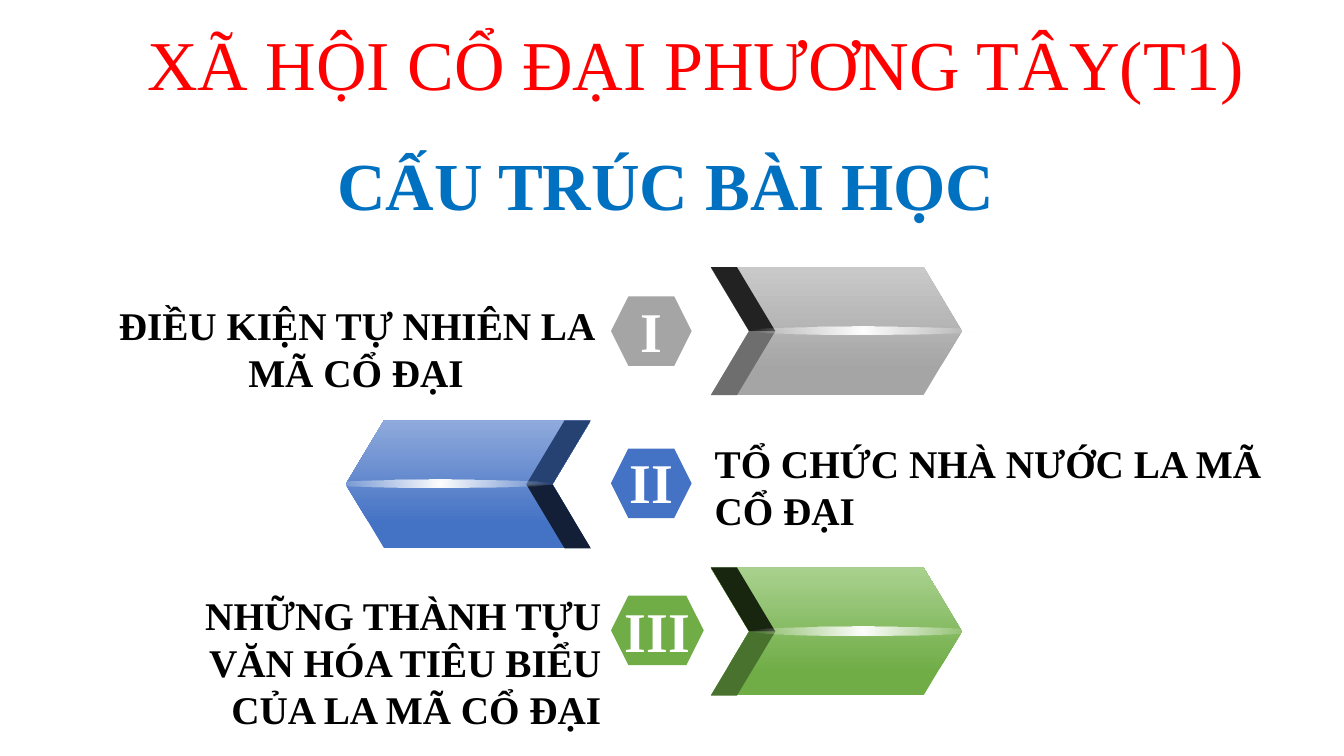
from dataclasses import dataclass
from lxml.etree import SubElement
from pptx import Presentation
from pptx.dml.color import RGBColor
from pptx.enum.shapes import MSO_SHAPE
from pptx.enum.text import MSO_ANCHOR, MSO_AUTO_SIZE, PP_ALIGN
from pptx.oxml.ns import qn
from pptx.util import Inches, Pt


@dataclass
class Theme:
    font: str = "Times New Roman"
    red: str = "FF0000"
    blue: str = "0070C0"
    white: str = "FFFFFF"
    black: str = "000000"
    title: int = 50
    head: int = 48
    number: int = 40
    body: int = 28


theme = Theme()


def write(shape, text, size, color, align, bold=True, wrap=True):
    frame = shape.text_frame
    frame.text = text
    frame.word_wrap = wrap
    frame.auto_size = MSO_AUTO_SIZE.NONE
    line = frame.paragraphs[0]
    line.alignment = align
    font = line.runs[0].font
    font.name, font.size, font.bold = theme.font, Pt(size), bold
    font.color.rgb = RGBColor.from_string(color)


def draw(shape, color=None, stops=(), round_fill=False):
    """Paint a plain colour, or a gradient of (place, colour, alpha) stops."""
    shape.shadow.inherit = False
    shape.line.fill.background()
    if color:
        shape.fill.solid()
        shape.fill.fore_color.rgb = RGBColor.from_string(color)
        return
    shape.fill.gradient()
    grad = shape._element.spPr.find(qn("a:gradFill"))
    for child in list(grad):
        grad.remove(child)
    items = SubElement(grad, qn("a:gsLst"))
    for place, tint, alpha in stops:
        stop = SubElement(items, qn("a:gs"), pos=str(place * 1000))
        tone = SubElement(stop, qn("a:srgbClr"), val=tint)
        SubElement(tone, qn("a:alpha"), val=str(alpha * 1000))
    if round_fill:
        way = SubElement(grad, qn("a:path"), {"path": "circle"})
        SubElement(way, qn("a:fillToRect"), l="50000", t="50000", r="50000", b="50000")
    else:
        SubElement(grad, qn("a:lin"), ang="16200000", scaled="0")


deck = Presentation()
deck.slide_width, deck.slide_height = Inches(13.33), Inches(7.5)
slide = deck.slides.add_slide(deck.slide_layouts[5])
shapes = slide.shapes

# Title
title = shapes.title
title.left, title.top = Inches(1.31), Inches(0.15)
title.width, title.height = Inches(11.19), Inches(0.94)
write(title, "XÃ HỘI CỔ ĐẠI PHƯƠNG TÂY(T1)", theme.title, theme.red,
      PP_ALIGN.CENTER, bold=False, wrap=False)

# Heading
head = shapes.add_shape(MSO_SHAPE.FOLDED_CORNER, Inches(3.21), Inches(1.37),
                        Inches(6.79), Inches(1.08))
head.shadow.inherit = False
head.fill.background()
head.line.fill.background()
write(head, "CẤU TRÚC BÀI HỌC", theme.head, theme.blue, PP_ALIGN.CENTER, wrap=False)
head.text_frame.vertical_anchor = MSO_ANCHOR.TOP

# Arrows: top, points left, base, light, upper fold, lower fold
arrows = [
    (2.65, False, "A5A5A5", "C9C9C9", "222222", "6E6E6E"),
    (4.17, True, "4472C4", "8FAADC", "264273", "121F36"),
    (5.63, False, "70AD47", "A9D18E", "18250F", "4A722F"),
]
tall = 1.27
for top, flip, base, light, upper, lower in arrows:
    # Body
    left, wide = (3.43, 2.43) if flip else (7.05, 2.49)
    arrow = shapes.add_shape(MSO_SHAPE.CHEVRON, Inches(left), Inches(top),
                             Inches(wide), Inches(tall))
    arrow.adjustments[0] = 0.3
    draw(arrow, stops=[(19, base, 100), (100, light, 100)])
    if flip:
        arrow._element.spPr.find(qn("a:xfrm")).set("flipH", "1")

    # Folds at the notched end
    tail, side = (left + wide, -1) if flip else (left, 1)
    mid = top + tall / 2
    for edge, shade in ((top, upper), (top + tall, lower)):
        spots = [(0, edge), (0.26, edge), (0.64, mid), (0.38, mid)]
        points = [(Inches(tail + side * x), Inches(y)) for x, y in spots]
        path = shapes.build_freeform(*points[0])
        path.add_line_segments(points[1:], close=True)
        draw(path.convert_to_shape(), shade)

    # Shine along the crease
    shine = shapes.add_shape(MSO_SHAPE.OVAL, Inches(3.26 if flip else 7.45),
                             Inches(top + 0.59), Inches(2.21), Inches(0.08))
    draw(shine, stops=[(0, theme.white, 100), (100, theme.white, 0)], round_fill=True)

# Numbers: text, hexagon top and width, box left, top and width, colour
marks = [
    ("I", 2.94, 0.8, 6.25, 2.89, 0.42, "A5A5A5"),
    ("II", 4.45, 0.8, 6.14, 4.39, 0.64, "4472C4"),
    ("III", 5.91, 0.92, 6.1, 5.87, 0.95, "70AD47"),
]
for text, top, wide, left, high, span, color in marks:
    badge = shapes.add_shape(MSO_SHAPE.HEXAGON, Inches(6.06), Inches(top),
                             Inches(wide), Inches(0.69))
    draw(badge, color)
    box = shapes.add_textbox(Inches(left), Inches(high), Inches(span), Inches(0.77))
    last = text == "III"
    write(box, text, theme.number, theme.white,
          PP_ALIGN.LEFT if last else PP_ALIGN.CENTER, wrap=last)

# Topics
topics = [
    ("ĐIỀU KIỆN TỰ NHIÊN LA MÃ CỔ ĐẠI", 1.07, 2.94, 4.92, 1.04, PP_ALIGN.CENTER),
    ("TỔ CHỨC NHÀ NƯỚC LA MÃ CỔ ĐẠI", 6.99, 4.31, 6.06, 1.04, PP_ALIGN.LEFT),
    ("NHỮNG THÀNH TỰU VĂN HÓA TIÊU BIỂU CỦA LA MÃ CỔ ĐẠI",
     1.07, 5.82, 4.99, 1.51, PP_ALIGN.RIGHT),
]
for text, left, top, wide, high, align in topics:
    box = shapes.add_textbox(Inches(left), Inches(top), Inches(wide), Inches(high))
    write(box, text, theme.body, theme.black, align)

deck.save("out.pptx")
